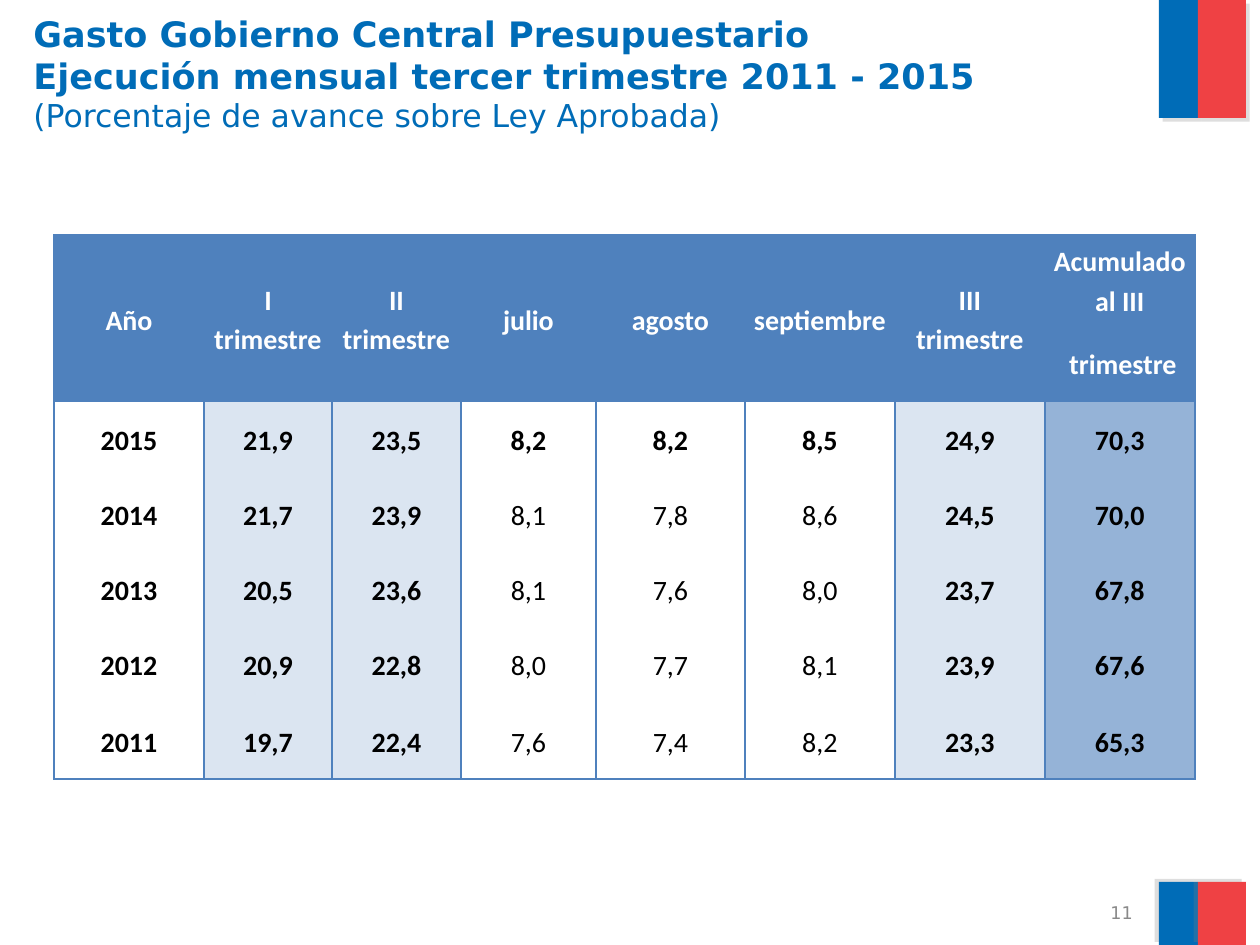
from lxml.etree import SubElement
from pptx import Presentation
from pptx.dml.color import RGBColor
from pptx.enum.shapes import MSO_SHAPE
from pptx.enum.text import MSO_ANCHOR as Anchor, PP_ALIGN as Align
from pptx.oxml.ns import qn
from pptx.util import Pt

SCALE = 914400 / 126  # EMU per px

BLUE = RGBColor(0x00, 0x6C, 0xB7)
RED = RGBColor(0xEF, 0x41, 0x44)
GREY = RGBColor(0x89, 0x89, 0x89)
WHITE = RGBColor(0xFF, 0xFF, 0xFF)
BLACK = RGBColor(0x00, 0x00, 0x00)
HEADER_BLUE = RGBColor(0x4F, 0x81, 0xBD)
PALE_BLUE = RGBColor(0xDB, 0xE5, 0xF1)
MID_BLUE = RGBColor(0x95, 0xB3, 0xD7)

# Content
TITLE = [
    ("Gasto Gobierno Central Presupuestario", 20, True),
    ("Ejecución mensual tercer trimestre 2011 - 2015", 20, True),
    ("(Porcentaje de avance sobre Ley Aprobada)", 18, False),
]
PAGE_NUMBER = "11"
HEADERS = ["Año", "I trimestre", "II trimestre", "julio", "agosto",
           "septiembre", "III\ntrimestre", "Acumulado al III"]
LAST_HEADER_BELOW = " trimestre"
ROWS = [
    ["2015", "21,9", "23,5", "8,2", "8,2", "8,5", "24,9", "70,3"],
    ["2014", "21,7", "23,9", "8,1", "7,8", "8,6", "24,5", "70,0"],
    ["2013", "20,5", "23,6", "8,1", "7,6", "8,0", "23,7", "67,8"],
    ["2012", "20,9", "22,8", "8,0", "7,7", "8,1", "23,9", "67,6"],
    ["2011", "19,7", "22,4", "7,6", "7,4", "8,2", "23,3", "65,3"],
]
MONTH_COLUMNS = (3, 4, 5)
COLUMN_FILLS = {1: PALE_BLUE, 2: PALE_BLUE, 6: PALE_BLUE, 7: MID_BLUE}

# Layout in px
COLUMN_WIDTHS = [150, 128, 129, 135, 149, 150, 150, 150]
ROW_HEIGHTS = [89, 40, 75, 75, 75, 75, 78]
TABLE_LEFT, TABLE_TOP = 54, 235
FLAG_COLUMNS = [(1159, 39, BLUE), (1198, 48, RED)]
FLAG_BANDS = [(0, 118, 45), (882, 63, 215)]  # top, height, shadow angle


def px(value):
    return round(value * SCALE)


def box(*lengths):
    return [px(length) for length in lengths]


def set_format(target, values):
    for name, value in values.items():
        setattr(target, name, value)


def style_run(run, font, size, color, bold=False):
    set_format(run.font, {"name": font, "size": Pt(size), "bold": bold})
    run.font.color.rgb = color


def add_shadow(shape, angle):
    shape.shadow.inherit = False
    effects = shape._element.spPr.find(qn("a:effectLst"))
    shadow = SubElement(effects, qn("a:outerShdw"), dist=str(Pt(3)),
                        dir=str(angle * 60000), algn="ctr", rotWithShape="0")
    color = SubElement(shadow, qn("a:srgbClr"), val="808080")
    SubElement(color, qn("a:alpha"), val="25000")


def set_borders(cell, sides):
    properties = cell._tc.get_or_add_tcPr()
    for side in "LRTB":
        line = SubElement(properties, qn("a:ln" + side), w=str(Pt(1)))
        if side in sides:
            fill = SubElement(line, qn("a:solidFill"))
            SubElement(fill, qn("a:srgbClr"), val=str(HEADER_BLUE))
        else:
            SubElement(line, qn("a:noFill"))


def format_cell(cell, text, color, bold, fill, sides):
    set_borders(cell, sides)
    if fill is None:
        cell.fill.background()
    else:
        cell.fill.solid()
        cell.fill.fore_color.rgb = fill
    set_format(cell, {"margin_left": px(6), "margin_right": px(6),
                      "margin_top": 0, "margin_bottom": 0,
                      "vertical_anchor": Anchor.MIDDLE})
    cell.text = text
    for paragraph in cell.text_frame.paragraphs:
        set_format(paragraph, {"alignment": Align.CENTER, "line_spacing": 1.15})
        for run in paragraph.runs:
            style_run(run, "Calibri", 16, color, bold)


def add_flags(slide):
    for top, height, angle in FLAG_BANDS:
        for left, width, color in FLAG_COLUMNS:
            shape = slide.shapes.add_shape(MSO_SHAPE.RECTANGLE,
                                           *box(left, top, width, height))
            shape.fill.solid()
            shape.fill.fore_color.rgb = color
            shape.line.fill.background()
            add_shadow(shape, angle)


def add_texts(slide):
    # Title
    frame = slide.shapes.add_textbox(*box(21, 6, 1125, 158)).text_frame
    frame.word_wrap = True
    paragraph = frame.paragraphs[0]
    for index, (text, size, bold) in enumerate(TITLE):
        if index:
            paragraph.add_line_break()
        run = paragraph.add_run()
        run.text = text
        style_run(run, "DejaVu Sans", size, BLUE, bold)

    # Page number
    frame = slide.shapes.add_textbox(*box(852, 900, 293, 26)).text_frame
    set_format(frame, {"word_wrap": True, "vertical_anchor": Anchor.MIDDLE})
    paragraph = frame.paragraphs[0]
    paragraph.alignment = Align.RIGHT
    run = paragraph.add_run()
    run.text = PAGE_NUMBER
    style_run(run, "DejaVu Sans", 10, GREY)


def add_spending_table(slide):
    frame = slide.shapes.add_table(
        len(ROW_HEIGHTS), len(COLUMN_WIDTHS),
        *box(TABLE_LEFT, TABLE_TOP, sum(COLUMN_WIDTHS), sum(ROW_HEIGHTS)))
    table = frame.table
    set_format(table, {"first_row": False, "horz_banding": False})
    for column, width in zip(table.columns, COLUMN_WIDTHS):
        column.width = px(width)
    for row, height in zip(table.rows, ROW_HEIGHTS):
        row.height = px(height)

    # Two header rows, merged in all but the last column
    last = len(HEADERS) - 1
    for column, text in enumerate(HEADERS):
        below = LAST_HEADER_BELOW if column == last else ""
        for row, (label, sides) in enumerate([(text, "LRT"), (below, "LRB")]):
            format_cell(table.cell(row, column), label, WHITE, True,
                        HEADER_BLUE, sides)
        if column != last:
            table.cell(0, column).merge(table.cell(1, column))

    # Yearly figures
    for index, values in enumerate(ROWS):
        sides = "LR"
        if index == 0:
            sides += "T"
        if index == len(ROWS) - 1:
            sides += "B"
        for column, text in enumerate(values):
            bold = index == 0 or column not in MONTH_COLUMNS
            format_cell(table.cell(index + 2, column), text, BLACK, bold,
                        COLUMN_FILLS.get(column), sides)


def main():
    presentation = Presentation()
    set_format(presentation, {"slide_width": px(1260), "slide_height": px(945)})
    slide = presentation.slides.add_slide(presentation.slide_layouts[6])
    add_flags(slide)
    add_texts(slide)
    add_spending_table(slide)
    presentation.save("out.pptx")


if __name__ == "__main__":
    main()
